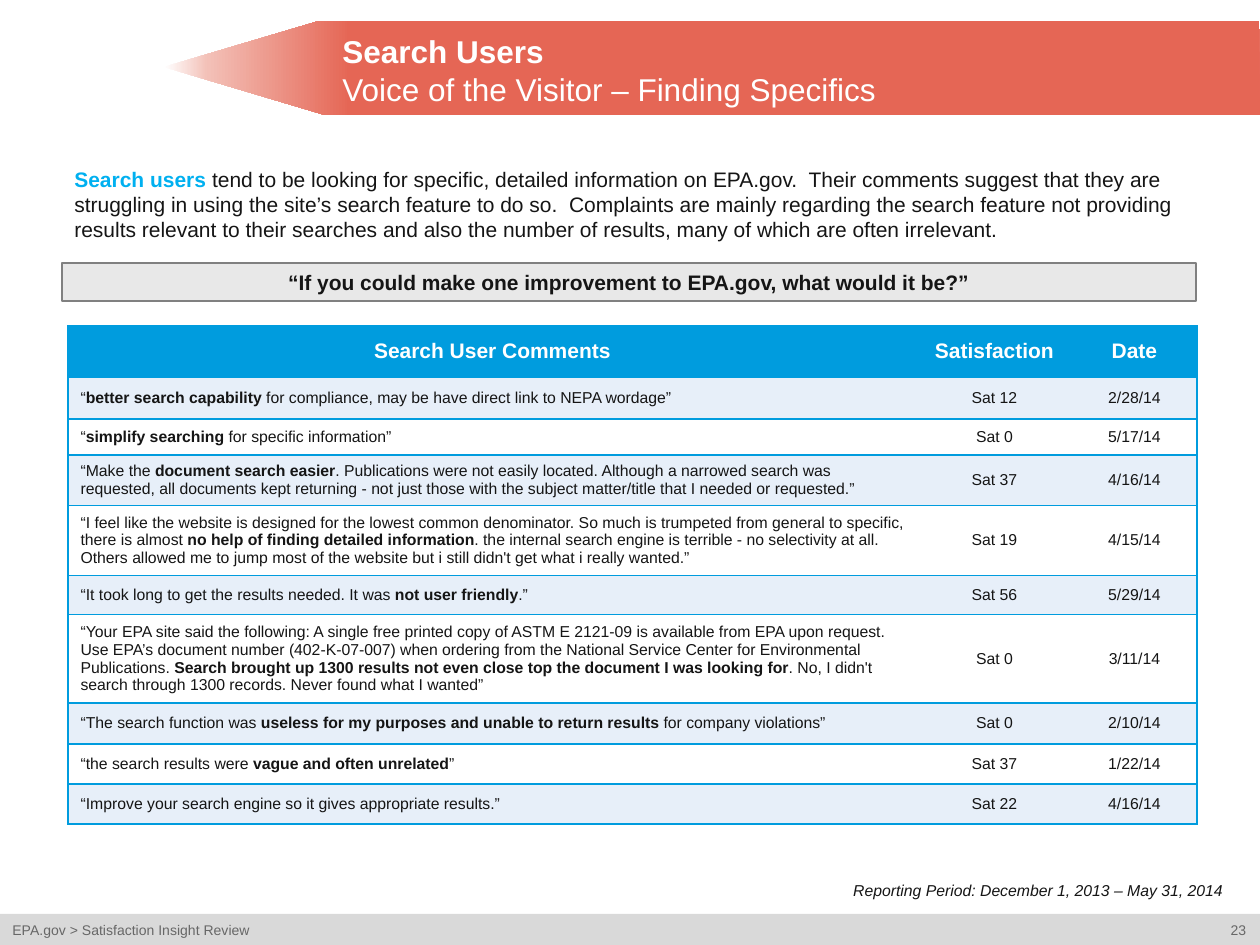
"""Build the Search Users comment slide."""
from copy import deepcopy

from lxml.etree import SubElement
from pptx import Presentation
from pptx.dml.color import RGBColor
from pptx.enum.shapes import MSO_SHAPE
from pptx.enum.text import MSO_ANCHOR, PP_ALIGN
from pptx.oxml.ns import qn
from pptx.util import Pt

SCALE = 914400 / 126
FONT = "Arial"
HUES = {
    "white": "FFFFFF", "blush": "F3C0B7", "coral": "E56655", "bar": "D9D9D9",
    "muted": "676767", "panel": "E8E8E8", "edge": "808080", "ink": "151515",
    "blue": "009CDE", "sky": "00B0F0", "pale": "E7EFF9",
}
ALIGN = {"left": PP_ALIGN.LEFT, "center": PP_ALIGN.CENTER, "right": PP_ALIGN.RIGHT}
HEAD = ("Search User Comments", "Satisfaction", "Date")
ROWS = [
    ("“*better search capability *for compliance, may be have direct link to NEPA wordage”",
     "Sat 12", "2/28/14"),
    ("“*simplify searching *for specific information”", "Sat 0", "5/17/14"),
    ("“Make the *document search easier*. Publications were not easily located. "
     "Although a narrowed search was requested, all documents kept returning - not just "
     "those with the subject matter/title that I needed or requested.”",
     "Sat 37", "4/16/14"),
    ("“I feel like the website is designed for the lowest common denominator. So much is "
     "trumpeted from general to specific, there is almost *no help of finding detailed "
     "information*. the internal search engine is terrible - no selectivity at all. "
     "Others allowed me to jump most of the website but i still didn't get what i really "
     "wanted.”", "Sat 19", "4/15/14"),
    ("“It took long to get the results needed. It was *not user friendly*.”",
     "Sat 56", "5/29/14"),
    ("“Your EPA site said the following: A single free printed copy of ASTM E 2121-09 is "
     "available from EPA upon request. Use EPA’s document number (402-K-07-007) when "
     "ordering from the National Service Center for Environmental Publications. *Search "
     "brought up 1300 results not even close top the document I was looking for*. No, I "
     "didn't search through 1300 records. Never found what I wanted”",
     "Sat 0", "3/11/14"),
    ("“The search function was *useless for my purposes and unable to return results *for "
     "company violations”", "Sat 0", "2/10/14"),
    ("“the search results were *vague and often unrelated*”", "Sat 37", "1/22/14"),
    ("“Improve your search engine so it gives appropriate results.”",
     "Sat 22", "4/16/14"),
]
WIDTHS = (849, 155, 125)
HEIGHTS = (51, 42, 36, 50, 70, 39, 88, 41, 40, 40)


def px(*lengths):
    """Turn pixel lengths into EMU."""
    return [round(n * SCALE) for n in lengths]


def hue(name):
    """Look up a colour by name."""
    return RGBColor.from_string(HUES[name])


def write(frame, text, size=9, color="ink", accent=None, italic=False, align="left"):
    """Fill a frame with text, with bold parts between asterisks."""
    para = frame.paragraphs[0]
    para.alignment = ALIGN[align]
    for i, part in enumerate(text.split("*")):
        bold = i % 2 == 1
        for j, line in enumerate(part.split("\n")):
            if j:
                para.add_line_break()
            if line:
                run = para.add_run()
                run.text = line
                font = run.font
                font.name, font.size = FONT, Pt(size)
                font.bold, font.italic = bold, italic
                font.color.rgb = hue(accent if bold and accent else color)


def border(cell, sides, color="blue"):
    """Draw the named sides of a cell and clear the others."""
    props = cell._tc.get_or_add_tcPr()
    for side in "LRTB":
        line = SubElement(props, qn(f"a:ln{side}"), w=str(Pt(1)))
        if side in sides:
            fill = SubElement(line, qn("a:solidFill"))
            SubElement(fill, qn("a:srgbClr"), val=HUES[color])
        else:
            SubElement(line, qn("a:noFill"))


class Deck:
    """Hold the file and its current slide."""

    def __init__(self, wide, high):
        """Start a file with one blank slide."""
        self.file = Presentation()
        self.file.slide_width, self.file.slide_height = px(wide, high)
        self.slide = self.file.slides.add_slide(self.file.slide_layouts[6])
        self.shapes = self.slide.shapes

    def banner(self, points, stops):
        """Draw an outline with a left-to-right gradient."""
        start, *rest = points
        build = self.shapes.build_freeform(*start, scale=SCALE)
        build.add_line_segments(rest, close=True)
        shape = build.convert_to_shape()
        shape.shadow.inherit = False
        shape.line.fill.background()
        shape.fill.gradient()
        shape.fill.gradient_angle = 0
        group = shape._element.spPr.find(".//" + qn("a:gsLst"))
        while len(group) < len(stops):
            group.append(deepcopy(group[-1]))
        for stop, (place, color) in zip(shape.fill.gradient_stops, stops):
            stop.position = place
            stop.color.rgb = hue(color)

    def box(self, x, y, wide, high, fill, line=None):
        """Draw a rectangle and return its text frame."""
        shape = self.shapes.add_shape(MSO_SHAPE.RECTANGLE, *px(x, y, wide, high))
        shape.shadow.inherit = False
        shape.fill.solid()
        shape.fill.fore_color.rgb = hue(fill)
        if line:
            shape.line.color.rgb = hue(line)
            shape.line.width = Pt(0.75)
        else:
            shape.line.fill.background()
        return shape.text_frame

    def text(self, x, y, wide, high, words, wrap=True, middle=False, **form):
        """Add a text box."""
        frame = self.shapes.add_textbox(*px(x, y, wide, high)).text_frame
        frame.word_wrap = wrap
        if middle:
            frame.vertical_anchor = MSO_ANCHOR.MIDDLE
        write(frame, words, **form)

    def table(self, x, y, widths, heights, head, rows):
        """Add a table with a header and striped rows."""
        place = px(x, y, sum(widths), sum(heights))
        grid = self.shapes.add_table(len(heights), len(widths), *place).table
        grid.horz_banding = False
        for col, wide in zip(grid.columns, px(*widths)):
            col.width = wide
        for row, high in zip(grid.rows, px(*heights)):
            row.height = high
        last = len(widths) - 1
        for r, row in enumerate([head, *rows]):
            for c, words in enumerate(row):
                cell = grid.cell(r, c)
                border(cell, "TB" + ("L" if c == 0 else "") + ("R" if c == last else ""))
                cell.fill.solid()
                cell.vertical_anchor = MSO_ANCHOR.MIDDLE
                if r == 0:
                    cell.fill.fore_color.rgb = hue("blue")
                    write(cell.text_frame, f"*{words}*", size=12, color="white",
                          align="center")
                else:
                    cell.fill.fore_color.rgb = hue("pale" if r % 2 else "white")
                    write(cell.text_frame, words, align="center" if c else "left")


def main():
    """Lay out the slide and save it."""
    deck = Deck(1260, 945)
    deck.banner([(164, 67), (319, 21), (1259, 21), (1260, 115), (325, 115)],
                [(0, "white"), (0.04, "blush"), (0.17, "coral")])
    deck.box(0, 914, 1260, 31, "bar")
    deck.text(1217, 915, 43, 30, "23", wrap=False, size=8, color="muted", align="center")
    deck.text(0, 915, 267, 30, "EPA.gov > Satisfaction Insight Review", wrap=False,
              size=8, color="muted")
    deck.text(330, 23, 891, 93, "*Search Users*\nVoice of the Visitor – Finding Specifics",
              middle=True, size=18, color="white")
    quote = deck.box(62, 263, 1134, 38, "panel", line="edge")
    write(quote, "*“If you could make one improvement to EPA.gov, what would it be?”*",
          size=12, align="center")
    deck.table(68, 326, WIDTHS, HEIGHTS, HEAD, ROWS)
    deck.text(62, 160, 1134, 90,
              "*Search users *tend to be looking for specific, detailed information on "
              "EPA.gov.  Their comments suggest that they are struggling in using the "
              "site’s search feature to do so.  Complaints are mainly regarding the search "
              "feature not providing results relevant to their searches and also the number "
              "of results, many of which are often irrelevant.", size=12, accent="sky")
    deck.text(788, 875, 447, 31, "Reporting Period: December 1, 2013 – May 31, 2014",
              italic=True, align="right")
    deck.file.save("out.pptx")


if __name__ == "__main__":
    main()
